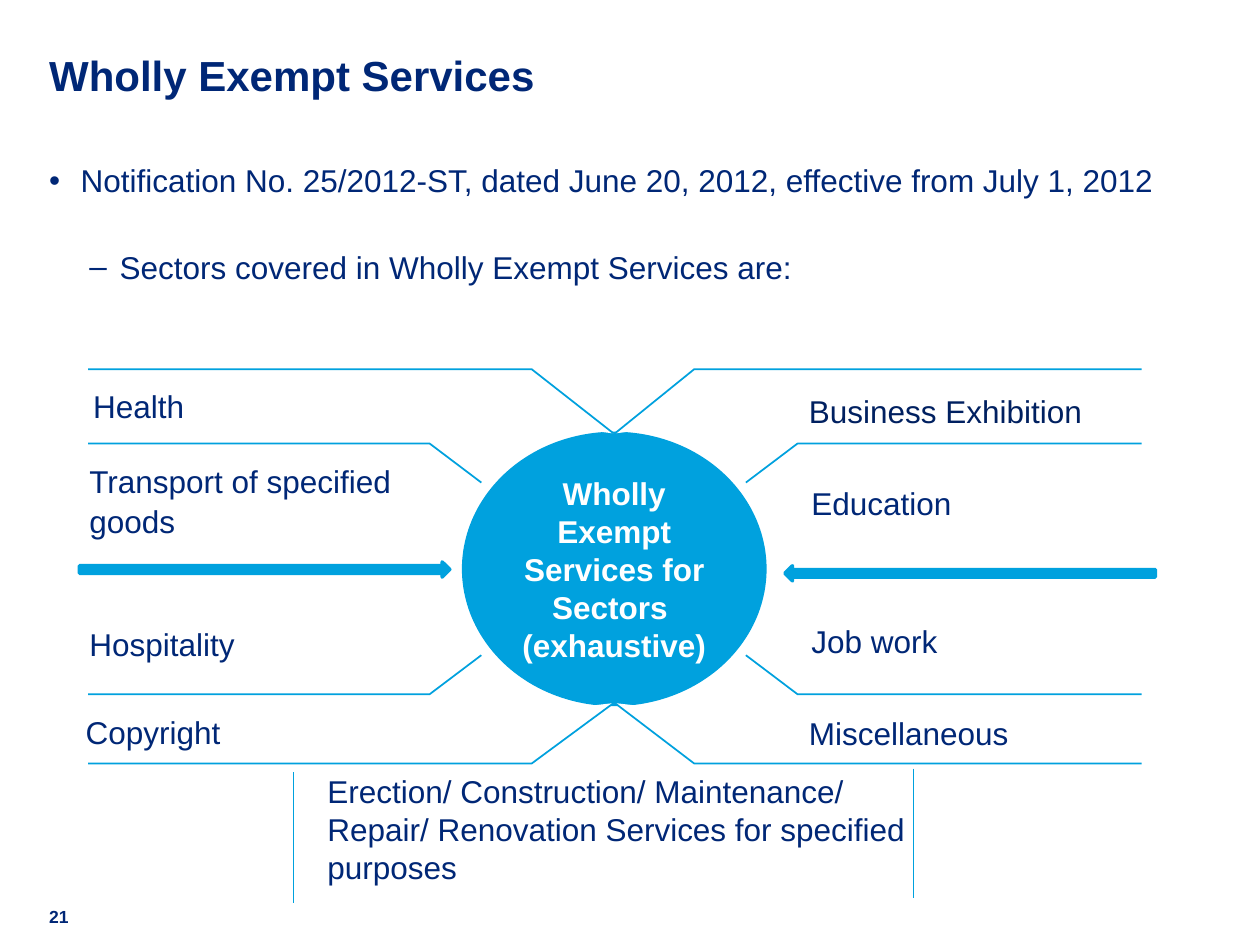
from lxml import etree
from pptx import Presentation
from pptx.dml.color import RGBColor
from pptx.enum import shapes, text
from pptx.oxml.ns import qn
from pptx.util import Inches, Pt

COLORS = {"navy": "002776", "dark": "002060", "cyan": "00A1DE", "white": "FFFFFF"}
FONT = "Arial"


def rgb(name):
    """Return the named palette colour."""
    return RGBColor.from_string(COLORS[name])


def write(paragraph, words, size=18, color="navy", bold=False, align=None,
          spacing=None, before=None, after=None):
    """Put formatted words into a paragraph."""
    run = paragraph.add_run()
    run.text = words
    run.font.name, run.font.size, run.font.bold = FONT, Pt(size), bold
    run.font.color.rgb = rgb(color)
    paragraph.alignment = align
    paragraph.line_spacing = spacing
    paragraph.space_before = before
    paragraph.space_after = after


def add_bullet(paragraph, mark, indent, hanging):
    """Give a paragraph a bullet mark and a hanging indent."""
    properties = paragraph._p.get_or_add_pPr()
    properties.set("marL", str(Inches(indent)))
    properties.set("indent", str(-Inches(hanging)))
    etree.SubElement(properties, qn("a:buFont")).set("typeface", FONT)
    etree.SubElement(properties, qn("a:buChar")).set("char", mark)


class SlideBuilder:
    """Hold the style and the current slide."""

    def __init__(self, slide):
        """Keep the slide to draw on."""
        self.slide = slide

    def frame(self, box, inset=0, anchor=text.MSO_ANCHOR.TOP, wrap=True):
        """Add a text box and return its text frame."""
        frame = self.slide.shapes.add_textbox(*map(Inches, box)).text_frame
        self.set_frame(frame, (inset, inset / 2), anchor, wrap)
        return frame

    def set_frame(self, frame, insets, anchor, wrap=True):
        """Set margins, anchor and wrapping of a text frame."""
        frame.margin_left = frame.margin_right = Inches(insets[0])
        frame.margin_top = frame.margin_bottom = Inches(insets[1])
        frame.vertical_anchor, frame.word_wrap = anchor, wrap

    def label(self, words, box, **style):
        """Add a vertically centred sector name."""
        frame = self.frame(box, anchor=text.MSO_ANCHOR.MIDDLE)
        write(frame.paragraphs[0], words, **style)

    def paint(self, shape, fill, width):
        """Set fill and outline, and drop the shadow."""
        shape.shadow.inherit = False
        shape.fill.solid()
        shape.fill.fore_color.rgb = rgb(fill)
        shape.line.color.rgb = rgb("cyan")
        shape.line.width = Pt(width)

    def shape(self, kind, box):
        """Add a solid cyan preset shape."""
        shape = self.slide.shapes.add_shape(kind, *map(Inches, box))
        self.paint(shape, "cyan", 2)
        return shape

    def branch(self, points):
        """Add an open bent outline through the points."""
        start, *rest = [(Inches(x), Inches(y)) for x, y in points]
        builder = self.slide.shapes.build_freeform(*start)
        builder.add_line_segments(rest, close=False)
        self.paint(builder.convert_to_shape(), "white", 1)

    def upright(self, x, top, bottom):
        """Add a thin vertical line."""
        line = self.slide.shapes.add_connector(
            shapes.MSO_CONNECTOR.STRAIGHT, *map(Inches, (x, top, x, bottom)))
        line.line.color.rgb = rgb("cyan")
        line.line.width = Pt(0.75)
        etree.SubElement(line._element.spPr, qn("a:effectLst"))


def main():
    """Build and save the exempt services slide."""
    deck = Presentation()
    deck.slide_width, deck.slide_height = Inches(10), Inches(7.5)
    page = SlideBuilder(deck.slides.add_slide(deck.slide_layouts[6]))

    heading = page.frame((0.39, 0.39, 9.21, 0.69))
    write(heading.paragraphs[0], "Wholly Exempt Services", size=24, bold=True)

    intro = page.frame((0.39, 1.28, 9.21, 1.2))
    notification, sectors = intro.paragraphs[0], intro.add_paragraph()
    write(notification, "Notification No. 25/2012-ST, dated June 20, 2012, "
          "effective from July 1, 2012", after=Pt(3))
    add_bullet(notification, "•", 0.25, 0.25)
    write(sectors, "Sectors covered in Wholly Exempt Services are:", before=Pt(25))
    add_bullet(sectors, "‒", 0.56, 0.24)

    hub = page.shape(shapes.MSO_SHAPE.OVAL, (3.68, 3.44, 2.39, 2.15)).text_frame
    page.set_frame(hub, (0.04, 0.04), text.MSO_ANCHOR.MIDDLE)
    for index, words in enumerate(("Wholly Exempt Services for", "Sectors ", "(exhaustive)")):
        paragraph = hub.add_paragraph() if index else hub.paragraphs[0]
        write(paragraph, words, color="white", bold=True, align=text.PP_ALIGN.CENTER)

    outer_levels = ((3.44, 2.93), (5.58, 6.06))
    inner_levels = ((3.83, 3.52), (5.2, 5.51))
    for tip, elbow, end, levels in (
            (4.87, 4.22, 0.7, outer_levels), (3.82, 3.41, 0.7, inner_levels),
            (4.88, 5.51, 9.06, outer_levels), (5.92, 6.33, 9.06, inner_levels)):
        for tip_y, rail_y in levels:
            page.branch(((tip, tip_y), (elbow, rail_y), (end, rail_y)))

    page.shape(shapes.MSO_SHAPE.RIGHT_ARROW, (0.63, 4.46, 2.94, 0.12))
    page.shape(shapes.MSO_SHAPE.LEFT_ARROW, (6.23, 4.49, 2.94, 0.12))
    page.upright(2.33, 6.13, 7.17)
    page.upright(7.25, 6.1, 7.13)

    for words, box in (
            ("Health", (0.74, 3.05, 3.5, 0.32)),
            ("Transport of specified goods", (0.71, 3.65, 2.78, 0.64)),
            ("Hospitality", (0.71, 4.95, 2.78, 0.3)),
            ("Copyright", (0.68, 5.64, 1.08, 0.32)),
            ("Education", (6.44, 3.82, 2.33, 0.32))):
        page.label(words, box, spacing=1.06)
    page.label("Business Exhibition", (6.42, 3.09, 3.5, 0.32), color="dark", spacing=1.06)
    page.label("Job work", (6.44, 4.94, 2.33, 0.3))
    page.label("Miscellaneous", (6.42, 5.67, 2.33, 0.3))

    works = page.frame((2.5, 6.08, 5, 1.01), inset=0.1)
    write(works.paragraphs[0], "Erection/ Construction/ Maintenance/ Repair/ "
          "Renovation Services for specified purposes")
    number = page.frame((0.39, 7.19, 0.39, 0.13))
    write(number.paragraphs[0], "21", size=10, bold=True)

    deck.save("out.pptx")


if __name__ == "__main__":
    main()
